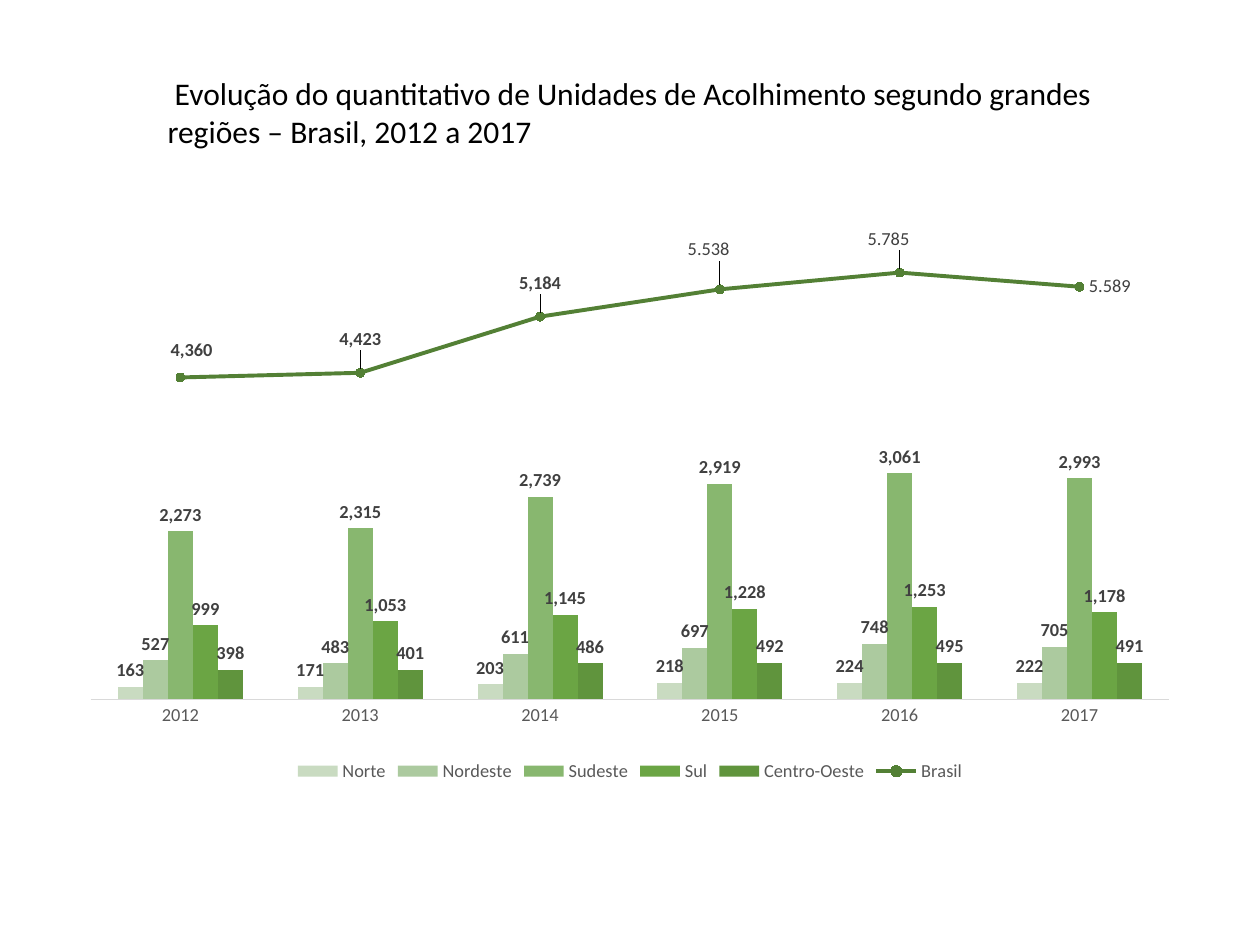
from pptx import Presentation, util as u
from pptx.chart import data as chart_data
from pptx.dml import color
from pptx.enum import chart as ch, text
from pptx.oxml import parse_xml
from pptx.oxml.ns import nsdecls, qn

COLORS = {"title": "000000", "axis_text": "595959", "label": "404040",
          "axis_line": "D9D9D9", "Norte": "C9DBC1", "Nordeste": "ACCA9F",
          "Sudeste": "88B76F", "Sul": "6BA544", "Centro-Oeste": "60943D",
          "Brasil": "538035"}
FONT = "Calibri"
YEARS = ["2012", "2013", "2014", "2015", "2016", "2017"]
VALUES = {
    "Norte": (163, 171, 203, 218, 224, 222),
    "Nordeste": (527, 483, 611, 697, 748, 705),
    "Sudeste": (2273, 2315, 2739, 2919, 3061, 2993),
    "Sul": (999, 1053, 1145, 1228, 1253, 1178),
    "Centro-Oeste": (398, 401, 486, 492, 495, 491),
    "Brasil": (4360, 4423, 5184, 5554, 5781, 5589),
}
TOTAL_LABELS = [(None, 0.01, -0.01), (None, 0, -0.02), (None, 0, -0.02),
                ("5.538", -0.01, -0.03), ("5.785", -0.01, -0.02), ("5.589", 0, 0)]
AXIS_MAXIMUM = 7000


def rgb(name):
    """Return the named colour."""
    return color.RGBColor.from_string(COLORS[name])


def style_font(font, size, color_name, bold=False):
    """Set the face, size, colour and weight of a font."""
    font.name, font.size, font.bold = FONT, u.Pt(size), bold
    font.color.rgb = rgb(color_name)


def manual_layout(x, y, modes="", size=""):
    """Return a manual layout element with the given place and size."""
    return parse_xml(
        f'<c:layout {nsdecls("c")}><c:manualLayout>{modes}'
        f'<c:x val="{x}"/><c:y val="{y}"/>{size}</c:manualLayout></c:layout>')


def add_title(slide, left, top, width, height):
    """Place the slide title in its box."""
    title = slide.shapes.title
    title.left, title.top, title.width, title.height = left, top, width, height
    frame = title.text_frame
    frame.word_wrap = True
    frame.auto_size = text.MSO_AUTO_SIZE.SHAPE_TO_FIT_TEXT
    frame.vertical_anchor = text.MSO_ANCHOR.TOP
    paragraph = frame.paragraphs[0]
    paragraph.alignment = text.PP_ALIGN.LEFT
    run = paragraph.add_run()
    run.text = (" Evolução do quantitativo de Unidades de Acolhimento "
                "segundo grandes regiões – Brasil, 2012 a 2017")
    style_font(run.font, 18, "title")


def move_total_to_line(chart):
    """Move the last series to a line plot on a hidden second axis."""
    plot_area = chart._chartSpace.chart.plotArea
    bar_plot = plot_area.find(qn("c:barChart"))
    total = bar_plot.findall(qn("c:ser"))[-1]
    for inversion in total.findall(qn("c:invertIfNegative")):
        total.remove(inversion)
    line_plot = parse_xml(
        f'<c:lineChart {nsdecls("c")}><c:grouping val="stacked"/>'
        '<c:varyColors val="0"/><c:marker val="1"/>'
        '<c:axId val="5001"/><c:axId val="5002"/></c:lineChart>')
    line_plot.insert(2, total)
    bar_plot.addnext(line_plot)
    previous = plot_area.find(qn("c:valAx"))
    axes = (("catAx", 5001, 5002, "b", "", "autoZero"),
            ("valAx", 5002, 5001, "r",
             f'<c:max val="{AXIS_MAXIMUM}"/><c:min val="0"/>', "max"))
    for tag, own, other, side, limits, crosses in axes:
        axis = parse_xml(
            f'<c:{tag} {nsdecls("c")}><c:axId val="{own}"/>'
            f'<c:scaling><c:orientation val="minMax"/>{limits}</c:scaling>'
            f'<c:delete val="1"/><c:axPos val="{side}"/>'
            f'<c:crossAx val="{other}"/><c:crosses val="{crosses}"/></c:{tag}>')
        previous.addnext(axis)
        previous = axis


def style_axes(chart):
    """Format the year axis and hide the value axis."""
    years = chart.category_axis
    years.major_tick_mark = years.minor_tick_mark = ch.XL_TICK_MARK.NONE
    years.has_major_gridlines = False
    years.format.line.color.rgb = rgb("axis_line")
    years.format.line.width = u.Pt(0.75)
    style_font(years.tick_labels.font, 10.5, "axis_text")
    values = chart.value_axis
    values.minimum_scale, values.maximum_scale = 0, AXIS_MAXIMUM
    values.has_major_gridlines = False
    values.visible = False


def style_labels(series, position):
    """Show the values of a series in bold."""
    labels = series.data_labels
    labels.show_value = True
    labels.number_format, labels.number_format_is_linked = "#,##0", False
    labels.position = position
    style_font(labels.font, 10.5, "label", bold=True)


def style_total(series):
    """Format the national line and its placed labels."""
    series.smooth = False
    series.format.line.color.rgb = rgb(series.name)
    series.format.line.width = u.Pt(2.25)
    marker = series.marker
    marker.style, marker.size = ch.XL_MARKER_STYLE.CIRCLE, 5
    marker.format.fill.solid()
    marker.format.fill.fore_color.rgb = rgb(series.name)
    marker.format.line.color.rgb = rgb(series.name)
    above, right = ch.XL_LABEL_POSITION.ABOVE, ch.XL_LABEL_POSITION.RIGHT
    style_labels(series, above)
    for index, (wording, x, y) in enumerate(TOTAL_LABELS):
        label = series.points[index].data_label
        if wording:
            run = label.text_frame.paragraphs[0].add_run()
            run.text = wording
            style_font(run.font, 10.5, "label")
        else:
            style_font(label.font, 10.5, "label", bold=True)
        label.position = above if y else right
        if y:
            element = series.data_labels._element.findall(qn("c:dLbl"))[index]
            element.find(qn("c:idx")).addnext(manual_layout(x, y))


def place_plot_area(chart):
    """Set the inner box of the plot area."""
    plot_area = chart._chartSpace.chart.plotArea
    for layout in plot_area.findall(qn("c:layout")):
        plot_area.remove(layout)
    plot_area.insert(0, manual_layout(
        0.02, 0.04,
        modes='<c:layoutTarget val="inner"/>'
              '<c:xMode val="edge"/><c:yMode val="edge"/>',
        size='<c:w val="0.96"/><c:h val="0.82"/>'))


def add_units_chart(slide, left, top, width, height):
    """Place the chart of regional columns and the national line."""
    data = chart_data.CategoryChartData(number_format="#,##0")
    data.categories = YEARS
    for name, values in VALUES.items():
        data.add_series(name, values)
    chart = slide.shapes.add_chart(
        ch.XL_CHART_TYPE.COLUMN_CLUSTERED, left, top, width, height, data).chart
    chart.has_title = False
    style_font(chart.font, 10, "title")
    style_axes(chart)
    move_total_to_line(chart)
    columns, line = chart.plots
    columns.gap_width, columns.overlap = 219, 0
    columns.vary_by_categories = False
    for series in columns.series:
        series.format.fill.solid()
        series.format.fill.fore_color.rgb = rgb(series.name)
        style_labels(series, ch.XL_LABEL_POSITION.OUTSIDE_END)
    style_total(line.series[0])
    chart.has_legend = True
    chart.legend.position = ch.XL_LEGEND_POSITION.BOTTOM
    chart.legend.include_in_layout = False
    style_font(chart.legend.font, 10.5, "axis_text")
    place_plot_area(chart)


def main():
    """Build and save the slide."""
    presentation = Presentation()
    presentation.slide_width = u.Inches(10)
    presentation.slide_height = u.Inches(7.5)
    slide = presentation.slides.add_slide(presentation.slide_layouts[5])
    add_units_chart(slide, *map(u.Inches, (0.54, 1.25, 8.92, 5)))
    add_title(slide, *map(u.Inches, (1.23, 0.54, 7.84, 0.71)))
    presentation.save("out.pptx")


if __name__ == "__main__":
    main()
